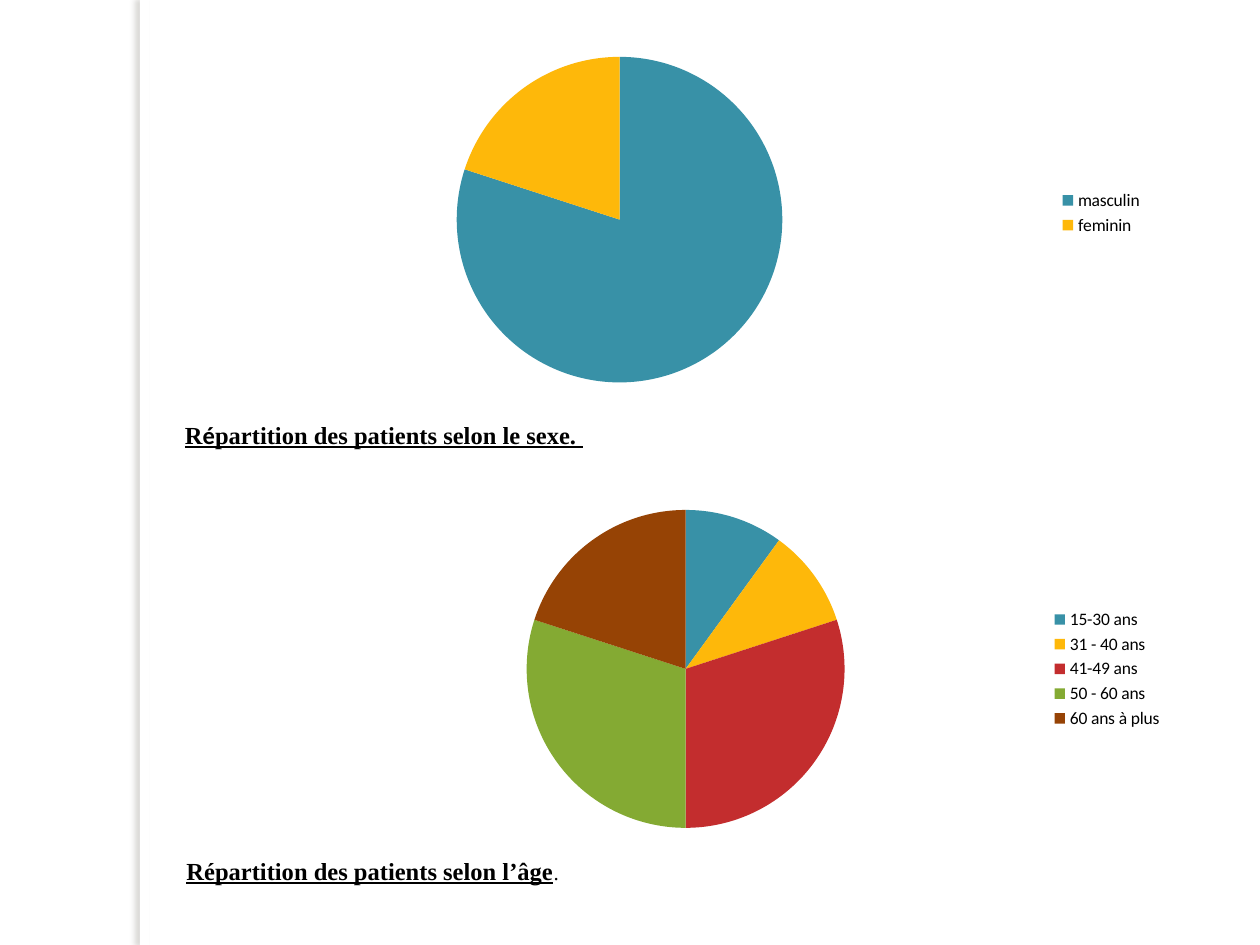
import pptx
import pptx.chart.data
import pptx.dml.color
import pptx.enum.chart
import pptx.enum.shapes
import pptx.enum.text
import pptx.oxml
import pptx.oxml.ns
import pptx.util
from lxml import etree
from pptx.util import Cm, Pt

SERIF, SANS = "Times New Roman", "Calibri"
PALETTE = ["3891A7", "FEB80A", "C32D2E", "84AA33", "964305"]

# Boxes are left, top, width, height in cm
SEX_PLOT = dict(x=0.143, y=0.082, w=0.564, h=0.873)
CHARTS = [
    ((4.5, 0.53, 18.8, 7.52), {"masculin": 80, "feminin": 20}, SEX_PLOT),
    ((6.5, 9.93, 17.2, 7.11),
     {"15-30 ans": 10, "31 - 40 ans": 10, "41-49 ans": 30,
      "50 - 60 ans ": 30, "60 ans à plus": 20}, None),
]

# Runs are text, font, size, emphasised (bold and underlined)
ALIGN = pptx.enum.text.PP_ALIGN
CAPTIONS = [
    ((3.1, 8.33, 9.7, 0.86), 0.63, ALIGN.JUSTIFY,
     [("R", SERIF, 14, True), ("é", SANS, 14, True),
      ("partition des patients selon le sexe. ", SERIF, 14, True)]),
    ((3.51, 17.12, 8.41, 0.86), 0.25, ALIGN.LEFT,
     [("Répartition des patients selon l’âge", SERIF, 14, True),
      (".", SERIF, 12, False)]),
]


def rgb(value):
    return pptx.dml.color.RGBColor.from_string(value)


def paint(fill, value):
    fill.solid()
    fill.fore_color.rgb = rgb(value)


def add_side_bar(s):
    """White vertical bar casting a soft shadow to the left."""
    bar = s.shapes.add_shape(pptx.enum.shapes.MSO_SHAPE.RECTANGLE,
                             Cm(2.82), 0, Cm(0.2), Cm(19.05))
    paint(bar.fill, "FFFFFF")
    bar.line.fill.background()
    bar.shadow.inherit = False
    effects = bar.element.spPr.find(pptx.oxml.ns.qn("a:effectLst"))
    effects.append(pptx.oxml.parse_xml(
        f'<a:outerShdw {pptx.oxml.ns.nsdecls("a")} blurRad="{Pt(3)}" '
        f'dist="{Pt(3)}" dir="10800000" algn="tl" rotWithShape="0">'
        '<a:srgbClr val="736F63"><a:alpha val="25000"/></a:srgbClr>'
        '</a:outerShdw>'))


def set_plot_layout(chart, plot_box):
    """Fix the inner plot area, given as fractions of the chart."""
    area = chart.element.chart.plotArea
    for old in area.findall(pptx.oxml.ns.qn("c:layout")):
        area.remove(old)
    layout = etree.Element(pptx.oxml.ns.qn("c:layout"))
    manual = etree.SubElement(layout, pptx.oxml.ns.qn("c:manualLayout"))
    settings = {"layoutTarget": "inner", "xMode": "edge", "yMode": "edge", **plot_box}
    for name, value in settings.items():
        etree.SubElement(manual, pptx.oxml.ns.qn(f"c:{name}"), val=str(value))
    area.insert(0, layout)


def add_pie(s, box, values, plot_box):
    data = pptx.chart.data.CategoryChartData()
    data.categories = list(values)
    data.add_series("Series 1", list(values.values()))
    chart = s.shapes.add_chart(pptx.enum.chart.XL_CHART_TYPE.PIE,
                               *map(Cm, box), data).chart
    chart.has_title = False
    chart.font.name, chart.font.size = SANS, Pt(10)
    chart.font.color.rgb = rgb("000000")
    chart.has_legend = True
    chart.legend.position = pptx.enum.chart.XL_LEGEND_POSITION.RIGHT
    chart.legend.include_in_layout = False
    points = chart.plots[0].series[0].points
    for i, colour in enumerate(PALETTE[:len(values)]):
        paint(points[i].format.fill, colour)
    if plot_box:
        set_plot_layout(chart, plot_box)


def add_caption(s, box, margin, align, runs):
    tf = s.shapes.add_textbox(*map(Cm, box)).text_frame
    tf.word_wrap = True
    tf.margin_left = Cm(margin)
    tf.vertical_anchor = pptx.enum.text.MSO_ANCHOR.MIDDLE
    p = tf.paragraphs[0]
    p.alignment = align
    p.font.color.rgb = rgb("000000")
    for text, font, size, emphasised in runs:
        r = p.add_run()
        r.text = text
        r.font.name, r.font.size = font, Pt(size)
        r.font.bold = r.font.underline = emphasised


def main():
    prs = pptx.Presentation()
    prs.slide_width, prs.slide_height = Cm(25.4), Cm(19.05)
    s = prs.slides.add_slide(prs.slide_layouts[6])
    paint(s.background.fill, "FFFFFF")
    add_side_bar(s)
    for chart in CHARTS:
        add_pie(s, *chart)
    for caption in CAPTIONS:
        add_caption(s, *caption)
    prs.save("out.pptx")


if __name__ == "__main__":
    main()
